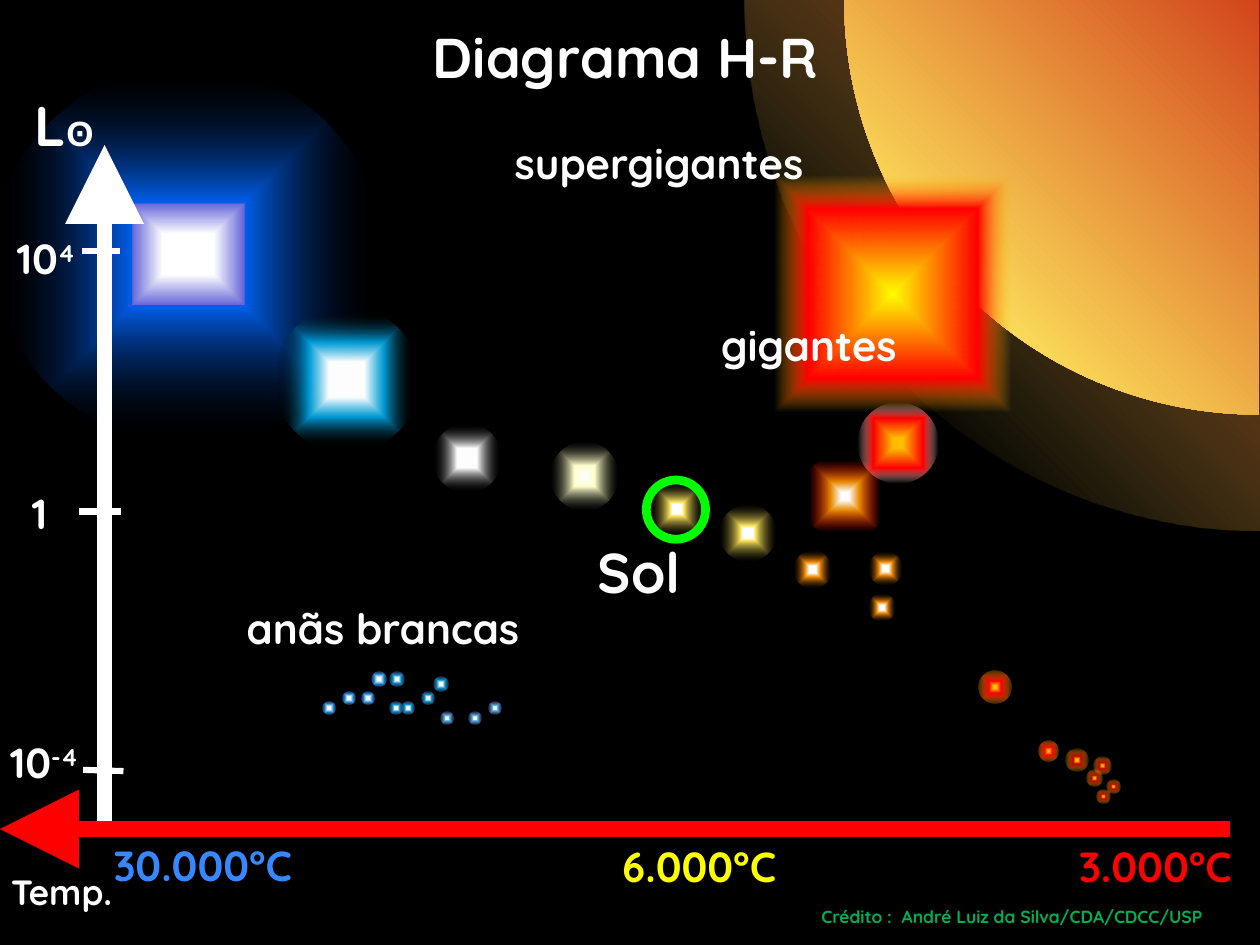
"""Build the Hertzsprung-Russell diagram slide."""
import pptx
import pptx.util
import pptx.dml.color
import pptx.enum.shapes
import pptx.enum.text
import pptx.oxml
import pptx.oxml.ns
from pptx.util import Inches

SHAPE = pptx.enum.shapes.MSO_SHAPE
ALIGN = pptx.enum.text.PP_ALIGN
NS = pptx.oxml.ns.nsdecls("a")


def color(code):
    return pptx.dml.color.RGBColor.from_string(code)


def glow(group, kind, box, stops, path="shape", focus=(50, 50, 50, 50), turn=0):
    shape = group.add_shape(kind, *map(Inches, box))
    shape.shadow.inherit = False
    shape.line.fill.background()
    shape.rotation = turn
    marks = "".join(
        f'<a:gs pos="{pos * 1000}"><a:srgbClr val="{code}">'
        f'<a:alpha val="{alpha * 1000}"/></a:srgbClr></a:gs>'
        for pos, code, alpha in stops)
    sides = " ".join(f'{side}="{part * 1000}"' for side, part in zip("ltrb", focus))
    grad = pptx.oxml.parse_xml(
        f'<a:gradFill {NS} rotWithShape="1"><a:gsLst>{marks}</a:gsLst>'
        f'<a:path path="{path}"><a:fillToRect {sides}/></a:path></a:gradFill>')
    shape._element.spPr.find(pptx.oxml.ns.qn("a:prstGeom")).addnext(grad)


deck = pptx.Presentation()
deck.slide_width, deck.slide_height = Inches(10), Inches(7.5)
slide = deck.slides.add_slide(deck.slide_layouts[6])
slide.background.fill.solid()
slide.background.fill.fore_color.rgb = color("000000")
shapes = slide.shapes

giant = [(11, "FFFFFF", 100), (17, "C4C4F1", 100), (27, "6666DA", 100),
         (27, "005FEC", 100), (100, "000000", 0)]
cyan = [(24, "FFFFFF", 100), (51, "00B0F0", 87), (93, "000000", 0)]
blue = [(22, "FFFFFF", 100), (70, "0070C0", 100), (100, "7878DE", 21)]
sky = [(22, "FFFFFF", 100), (52, "00B0F0", 82), (100, "7878DE", 21)]
pale = [(22, "FFFFFF", 100), (28, "69D8FF", 100), (100, "7878DE", 21)]
dark = [(9, "FFC000", 100), (32, "C00000", 100), (100, "FFC000", 10)]
red = [(9, "FFC000", 100), (32, "FF0000", 100), (100, "FFC000", 10)]
white = [(25, "FFFFFF", 100), (28, "FFFFFF", 100), (100, "000000", 0)]
cream = [(3, "FFFFFF", 100), (30, "FFFFCC", 100), (100, "000000", 23)]
gold = [(18, "FFFFFF", 100), (26, "FDE65D", 100), (100, "000000", 23)]
amber = [(18, "FFFFFF", 100), (39, "EE8800", 100), (100, "000000", 23)]
ember = [(9, "FFFFFF", 100), (32, "EA8D04", 100), (82, "FF0000", 0)]
super_red = [(0, "FFFF00", 100), (50, "FF0000", 100), (70, "FFC000", 0)]
rose = [(12, "FFC000", 100), (61, "FF0000", 100), (99, "FFFCF5", 0)]
halo = [(13, "FDE65D", 0), (56, "C00000", 94), (71, "FE732F", 0)]
disc = [(12, "FDE65D", 100), (66, "C00000", 100)]

glow(shapes, SHAPE.OVAL, (-0.04, 0.52, 3.07, 2.99), giant)
pair = shapes.add_group_shape().shapes
for box, stops in [((5.91, -4.23, 8.18, 8.44), halo), ((6.7, -3.29, 6.58, 6.58), disc)]:
    glow(pair, SHAPE.ARC, box, stops, "circle", (0, 100, 100, 0), 180)

stars = [
    (cyan, [(2.17, 2.43, 1.16)]),
    (blue, [(2.72, 5.49, 0.1), (2.95, 5.33, 0.12), (2.56, 5.57, 0.1), (2.87, 5.49, 0.1)]),
    (sky, [(3.44, 5.37, 0.12), (3.35, 5.49, 0.1), (3.19, 5.57, 0.1),
           (3.09, 5.57, 0.1), (3.09, 5.33, 0.12)]),
    (pale, [(3.88, 5.57, 0.1), (3.5, 5.65, 0.1), (3.72, 5.65, 0.1)]),
    (dark, [(8.46, 5.94, 0.18), (8.68, 6.01, 0.14), (8.78, 6.19, 0.11),
            (8.7, 6.27, 0.11), (8.62, 6.11, 0.13)]),
    (red, [(8.24, 5.88, 0.16), (7.77, 5.32, 0.26)]),
    (cream, [(4.37, 3.51, 0.54)]),
    (amber, [(6.89, 4.71, 0.22), (6.3, 4.37, 0.3), (6.89, 4.38, 0.27)]),
    (gold, [(5.16, 3.83, 0.42), (5.71, 4.01, 0.45)]),
    (white, [(3.43, 3.36, 0.55)]),
    (ember, [(6.36, 3.59, 0.69)]),
    (super_red, [(5.74, 0.99, 2.68)]),
    (rose, [(6.81, 3.2, 0.64)]),
]
for stops, spots in stars:
    for left, top, size in spots:
        glow(shapes, SHAPE.OVAL, (left, top, size, size), stops,
             turn=5.8 if stops is red else 0)

ring = shapes.add_shape(SHAPE.OVAL, *map(Inches, (5.13, 3.81, 0.47, 0.47)))
ring.shadow.inherit = False
ring.fill.background()
ring.line.color.rgb = color("00FF00")
ring.line.width = pptx.util.Pt(5)

lines = [
    ((0.65, 1.99, 0.95, 1.99), "FFFFFF", 3.5, False),
    ((0.63, 4.06, 0.96, 4.06), "FFFFFF", 3.5, False),
    ((0.66, 6.11, 0.98, 6.12), "FFFFFF", 3.5, False),
    ((0.83, 1.15, 0.83, 6.58), "FFFFFF", 9, True),
    ((0, 6.58, 9.76, 6.58), "FF0000", 9, True),
]
for ends, code, width, arrow in lines:
    line = shapes.add_connector(pptx.enum.shapes.MSO_CONNECTOR.STRAIGHT, *map(Inches, ends))
    line.line.color.rgb = color(code)
    line.line.width = pptx.util.Pt(width)
    if arrow:
        line.line._get_or_add_ln().append(pptx.oxml.parse_xml(
            f'<a:headEnd {NS} type="triangle" w="lg" len="lg"/>'))
    line._element.spPr.append(pptx.oxml.parse_xml(f"<a:effectLst {NS}/>"))

labels = [
    ((0.12, 0.13, 9.69, 0.64), "Diagrama H-R", 32, "FFFFFF"),
    ((3.5, 1.04, 3.46, 0.5), "supergigantes", 24, "FFFFFF"),
    ((4.69, 2.49, 3.46, 0.5), "gigantes", 24, "FFFFFF"),
    ((4.13, 4.22, 1.89, 0.64), "Sol", 32, "FFFFFF"),
    ((1.31, 4.73, 3.46, 0.5), "anãs brancas", 24, "FFFFFF"),
    ((0.04, 0.67, 0.94, 0.64), "L|ʘ", 32, "FFFFFF"),
    ((-0.07, 1.8, 0.87, 0.5), "10|4", 24, "FFFFFF"),
    ((-0.12, 3.82, 0.87, 0.5), "1", 24, "FFFFFF"),
    ((-0.12, 5.8, 0.94, 0.5), "10|-4", 24, "FFFFFF"),
    ((0.51, 6.61, 2.2, 0.5), "30.000°C", 24, "3788FF"),
    ((4.45, 6.62, 2.2, 0.5), "6.000°C", 24, "FFFF00"),
    ((8.07, 6.62, 2.2, 0.5), "3.000°C", 24, "FF0000"),
    ((-0.28, 6.86, 1.54, 0.44), "Temp.", 20, "FFFFFF"),
    ((6.42, 7.14, 3.39, 0.27), "Crédito :  André Luiz da Silva/CDA/CDCC/USP", 10, "00B050"),
]
for box, text, size, code in labels:
    frame = shapes.add_textbox(*map(Inches, box)).text_frame
    frame.word_wrap = True
    frame.auto_size = pptx.enum.text.MSO_AUTO_SIZE.SHAPE_TO_FIT_TEXT
    para = frame.paragraphs[0]
    para.alignment = ALIGN.LEFT if size == 10 else ALIGN.CENTER
    para.font.name, para.font.size, para.font.bold = "Quicksand", pptx.util.Pt(size), True
    para.font.color.rgb = color(code)
    for part in text.split("|"):
        run = para.add_run()
        run.text = part
        if part == "ʘ":
            run.font.name, run.font.size = "Arial", pptx.util.Pt(20)
        elif part in ("4", "-4"):
            run._r.get_or_add_rPr().set("baseline", "30000")

deck.save("out.pptx")
